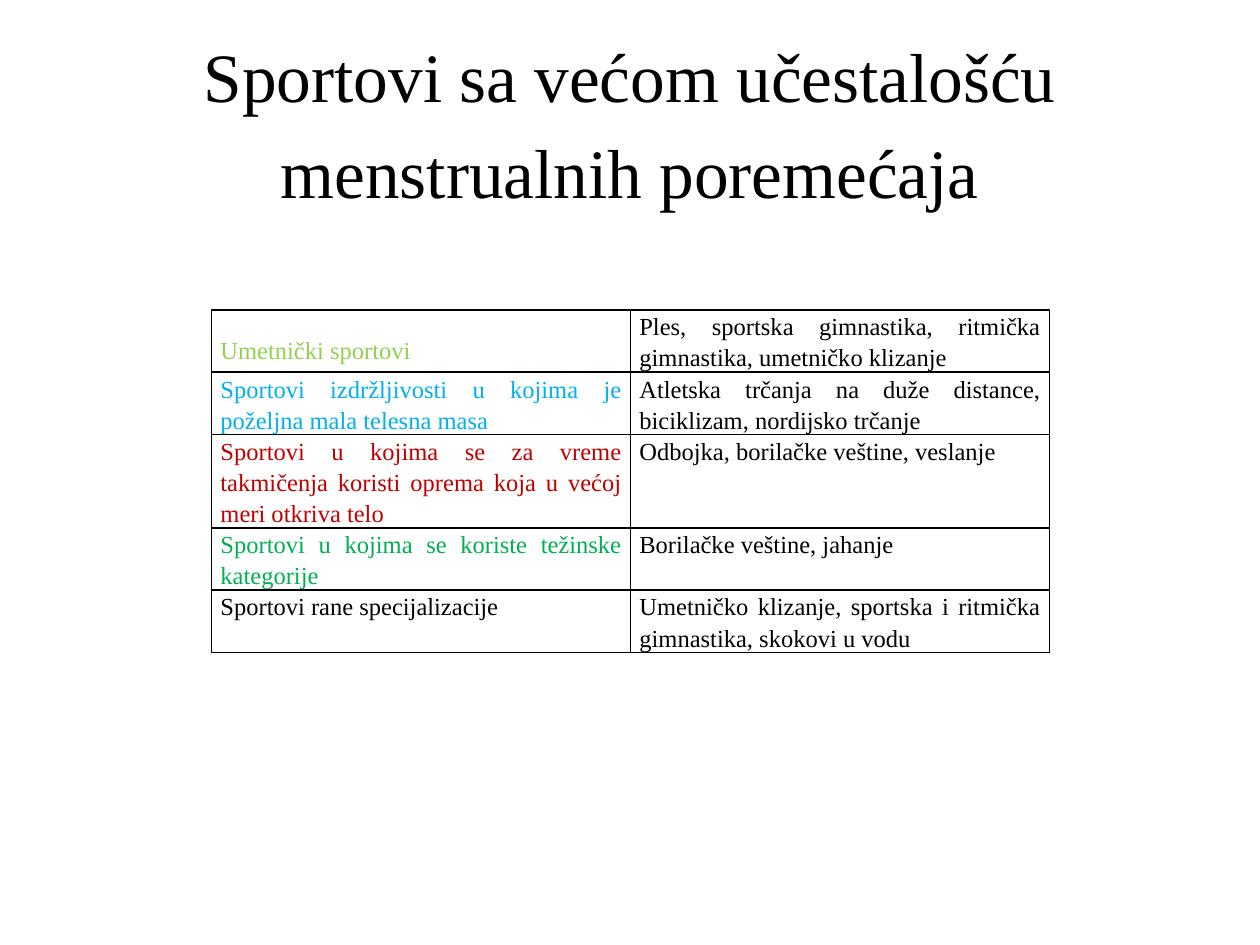
"""Build a slide with a table of sports with more frequent menstrual disorders."""
from lxml.etree import SubElement
from pptx import Presentation
from pptx.dml.color import RGBColor
from pptx.enum.text import MSO_ANCHOR, MSO_AUTO_SIZE, PP_ALIGN
from pptx.oxml.ns import qn
from pptx.util import Inches, Pt

COLORS = {"black": "000000", "lime": "92D050", "blue": "00B0F0",
          "red": "C00000", "green": "00B050"}
FONT = "Times New Roman"
TITLE = "Sportovi sa većom učestalošću menstrualnih poremećaja"
SPORTS = [
    ("Umetnički sportovi", "lime",
     "Ples, sportska gimnastika, ritmička gimnastika, umetničko klizanje"),
    ("Sportovi izdržljivosti u kojima je poželjna mala telesna masa", "blue",
     "Atletska trčanja na duže distance, biciklizam, nordijsko trčanje"),
    ("Sportovi u kojima se za vreme takmičenja koristi oprema koja u većoj meri otkriva telo",
     "red", "Odbojka, borilačke veštine, veslanje"),
    ("Sportovi u kojima se koriste težinske kategorije", "green",
     "Borilačke veštine, jahanje"),
    ("Sportovi rane specijalizacije", "black",
     "Umetničko klizanje, sportska i ritmička gimnastika, skokovi u vodu"),
]
ROW_LINES = [2, 2, 3, 2, 2]
LINE_HEIGHT = 0.247
FIRST_LABEL_DROP = 0.19
TITLE_BOX = {"left": 0.5, "top": 0.3, "width": 9, "height": 1.25}
TABLE_BOX = {"left": 1.68, "top": 2.46, "width": 6.65,
             "height": LINE_HEIGHT * sum(ROW_LINES)}
CELL_FORMAT = {"margin_left": Inches(0.07), "margin_right": Inches(0.07),
               "margin_top": 0, "margin_bottom": 0,
               "vertical_anchor": MSO_ANCHOR.TOP}


def apply_format(target, values):
    """Set every attribute in values on target."""
    for name, value in values.items():
        setattr(target, name, value)


def write_text(frame, text, size, color, alignment, space_after=0):
    """Write one formatted paragraph into a text frame."""
    paragraph = frame.paragraphs[0]
    apply_format(paragraph, {"alignment": alignment, "line_spacing": 1.15,
                             "space_before": Pt(0), "space_after": Pt(space_after)})
    run = paragraph.add_run()
    run.text = text
    apply_format(run.font, {"name": FONT, "size": Pt(size), "bold": False})
    run.font.color.rgb = RGBColor.from_string(COLORS[color])


def add_borders(cell):
    """Draw a thin black line on each side of a cell."""
    properties = cell._tc.get_or_add_tcPr()
    for position, side in enumerate(("lnL", "lnR", "lnT", "lnB")):
        line = properties.makeelement(qn(f"a:{side}"), {"w": str(Pt(1))})
        properties.insert(position, line)
        fill = SubElement(line, qn("a:solidFill"))
        SubElement(fill, qn("a:srgbClr"), val=COLORS["black"])


def add_title(slide):
    """Place and format the title."""
    title = slide.shapes.title
    apply_format(title, {name: Inches(value) for name, value in TITLE_BOX.items()})
    apply_format(title.text_frame, {"word_wrap": True, "auto_size": MSO_AUTO_SIZE.NONE,
                                    "vertical_anchor": MSO_ANCHOR.MIDDLE})
    write_text(title.text_frame, TITLE, 39.6, "black", PP_ALIGN.CENTER, 10)


def add_sports_table(slide):
    """Add the table of sport groups and examples."""
    box = {name: Inches(value) for name, value in TABLE_BOX.items()}
    table = slide.shapes.add_table(len(SPORTS), 2, **box).table
    apply_format(table, {"first_row": False, "horz_banding": False})
    for row, lines, (group, color, examples) in zip(table.rows, ROW_LINES, SPORTS):
        row.height = Inches(lines * LINE_HEIGHT)
        for cell, text, text_color in zip(row.cells, (group, examples), (color, "black")):
            apply_format(cell, CELL_FORMAT)
            cell.fill.background()
            add_borders(cell)
            write_text(cell.text_frame, text, 14, text_color, PP_ALIGN.JUSTIFY)
    table.cell(0, 0).margin_top = Inches(FIRST_LABEL_DROP)


def main():
    """Create and save the presentation."""
    presentation = Presentation()
    apply_format(presentation, {"slide_width": Inches(10), "slide_height": Inches(7.5)})
    slide = presentation.slides.add_slide(presentation.slide_layouts[5])
    add_title(slide)
    add_sports_table(slide)
    presentation.save("out.pptx")


if __name__ == "__main__":
    main()
